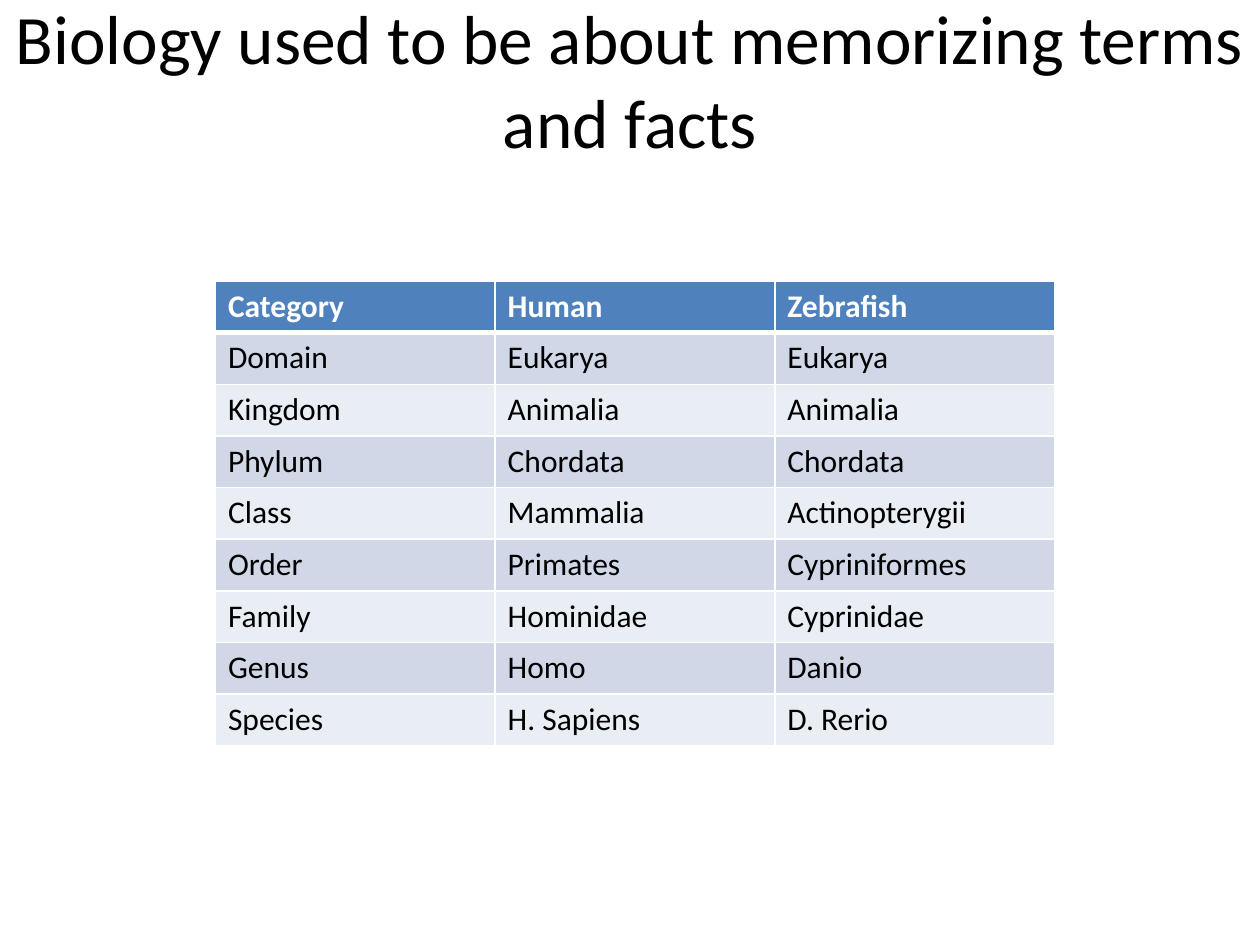
from lxml import etree
from pptx import Presentation
from pptx.dml.color import RGBColor
from pptx.enum.text import MSO_ANCHOR, PP_ALIGN
from pptx.oxml.ns import qn
from pptx.util import Inches, Pt

MIDDLE = MSO_ANCHOR.MIDDLE
CENTER = PP_ALIGN.CENTER
FONT = "Calibri"
BLACK, WHITE = "000000", "FFFFFF"
HEADER_FILL = "4F81BD"
BAND_FILLS = ("E9EDF4", "D0D8E8")
COLUMN_WIDTH, ROW_HEIGHT = 2.22, 0.41
TAXONOMY = [
    ("Category", "Human", "Zebrafish"),
    ("Domain", "Eukarya", "Eukarya"),
    ("Kingdom", "Animalia", "Animalia"),
    ("Phylum", "Chordata", "Chordata"),
    ("Class", "Mammalia", "Actinopterygii"),
    ("Order", "Primates", "Cypriniformes"),
    ("Family", "Hominidae", "Cyprinidae"),
    ("Genus", "Homo", "Danio"),
    ("Species", "H. Sapiens", "D. Rerio"),
]


def color(value):
    """Turn a hex string into a colour."""
    return RGBColor.from_string(value)


def set_font(para, size, ink, bold=False):
    """Set the font of a whole paragraph."""
    para.font.name = FONT
    para.font.size = Pt(size)
    para.font.bold = bold
    para.font.color.rgb = color(ink)


def add_title(page, text):
    """Add the centred title across the top of the page."""
    box = page.shapes.add_textbox(0, 0, Inches(10), Inches(1.25))
    frame = box.text_frame
    frame.word_wrap = True
    frame.vertical_anchor = MIDDLE
    para = frame.paragraphs[0]
    para.text = text
    para.alignment = CENTER
    set_font(para, 39.6, BLACK)


def set_borders(cell, top, bottom):
    """Give a cell white borders, with top and bottom widths in points."""
    properties = cell._tc.get_or_add_tcPr()
    for side, width in (("L", 1), ("R", 1), ("T", top), ("B", bottom)):
        line = etree.SubElement(properties, qn(f"a:ln{side}"), w=str(Pt(width)))
        fill = etree.SubElement(line, qn("a:solidFill"))
        etree.SubElement(fill, qn("a:srgbClr"), val=WHITE)


def fill_cell(cell, text, row):
    """Write and style one cell according to its row."""
    header = row == 0
    set_borders(cell, 3 if row == 1 else 1, 3 if header else 1)
    cell.fill.solid()
    cell.fill.fore_color.rgb = color(HEADER_FILL if header else BAND_FILLS[row % 2])
    cell.text = text
    set_font(cell.text_frame.paragraphs[0], 18, WHITE if header else BLACK, header)


def add_taxonomy_table(page, rows):
    """Add the banded table that compares the two species."""
    width, height = COLUMN_WIDTH * len(rows[0]), ROW_HEIGHT * len(rows)
    table = page.shapes.add_table(
        len(rows), len(rows[0]),
        Inches(1.71), Inches(2.23), Inches(width), Inches(height),
    ).table
    for row, texts in enumerate(rows):
        for column, text in enumerate(texts):
            fill_cell(table.cell(row, column), text, row)


def main():
    """Build and save the slide."""
    deck = Presentation()
    deck.slide_width, deck.slide_height = Inches(10), Inches(7.5)
    page = deck.slides.add_slide(deck.slide_layouts[6])
    add_title(page, "Biology used to be about memorizing terms and facts")
    add_taxonomy_table(page, TAXONOMY)
    deck.save("out.pptx")


if __name__ == "__main__":
    main()
